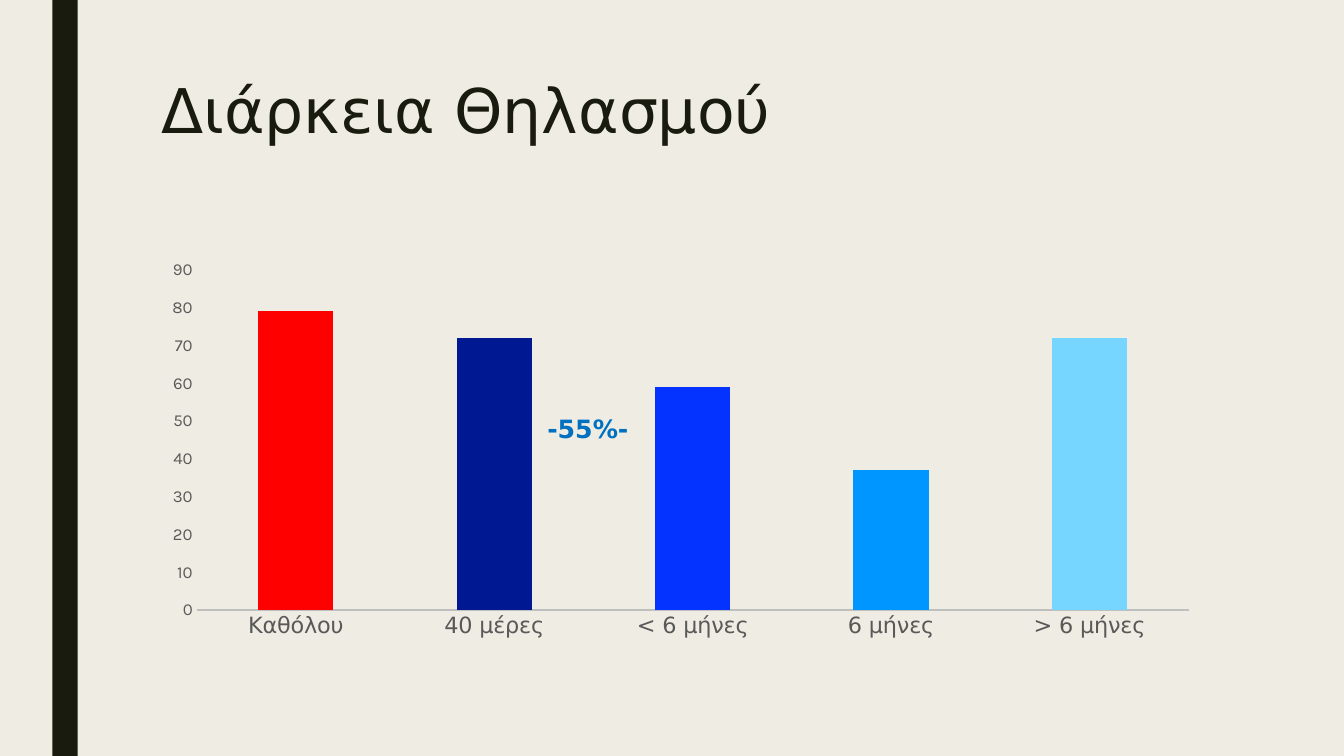
import pptx
import pptx.chart.data
import pptx.dml.color
import pptx.enum.chart
import pptx.enum.shapes
import pptx.enum.text
import pptx.util

Inches = pptx.util.Inches
Pt = pptx.util.Pt


def color(hex_code):
    return pptx.dml.color.RGBColor.from_string(hex_code)


def style_font(font, size, hex_code, name, bold=False):
    font.size = Pt(size)
    font.name = name
    font.bold = bold
    font.color.rgb = color(hex_code)


def write(frame, text, size=18, hex_code="191B0E", name="DejaVu Sans", bold=False,
          spacing=None):
    frame.word_wrap = True
    frame.vertical_anchor = pptx.enum.text.MSO_ANCHOR.TOP
    paragraph = frame.paragraphs[0]
    paragraph.alignment = pptx.enum.text.PP_ALIGN.LEFT
    paragraph.line_spacing = spacing
    run = paragraph.add_run()
    run.text = text
    style_font(run.font, size, hex_code, name, bold)


class SlideBuilder:
    background = "EFEDE3"
    dark = "191B0E"
    label_gray = "595959"
    axis_gray = "BFBFBF"

    def __init__(self, presentation):
        self.slide = presentation.slides.add_slide(presentation.slide_layouts[5])
        fill = self.slide.background.fill
        fill.solid()
        fill.fore_color.rgb = color(self.background)

    def stripe(self, left, top, width, height):
        stripe = self.slide.shapes.add_shape(
            pptx.enum.shapes.MSO_SHAPE.RECTANGLE,
            Inches(left), Inches(top), Inches(width), Inches(height))
        stripe.shadow.inherit = False
        stripe.fill.solid()
        stripe.fill.fore_color.rgb = color(self.dark)
        stripe.line.fill.background()

    def title(self, text, left, top, width, height):
        heading = self.slide.shapes.title
        heading.left, heading.top = Inches(left), Inches(top)
        heading.width, heading.height = Inches(width), Inches(height)
        write(heading.text_frame, text, size=44, hex_code=self.dark, spacing=0.89)

    def text(self, text, left, top, width, height, **style):
        box = self.slide.shapes.add_textbox(
            Inches(left), Inches(top), Inches(width), Inches(height))
        write(box.text_frame, text, **style)

    def columns(self, bars, left, top, width, height):
        data = pptx.chart.data.CategoryChartData()
        data.categories = [duration for duration, _, _ in bars]
        data.add_series("Series 1", [value for _, value, _ in bars])
        chart = self.slide.shapes.add_chart(
            pptx.enum.chart.XL_CHART_TYPE.COLUMN_CLUSTERED,
            Inches(left), Inches(top), Inches(width), Inches(height), data).chart
        chart.has_legend = False
        chart.has_title = False
        style_font(chart.font, 10, "000000", "Karla")

        plot = chart.plots[0]
        plot.gap_width = 164
        plot.overlap = -22
        plot.vary_by_categories = False
        series = plot.series[0]
        for index, (_, _, hex_code) in enumerate(bars):
            fill = series.points[index].format.fill
            fill.solid()
            fill.fore_color.rgb = color(hex_code)

        durations, values = chart.category_axis, chart.value_axis
        for axis, size, name in ((durations, 16, "DejaVu Sans"), (values, 12, "Karla")):
            axis.has_major_gridlines = False
            axis.major_tick_mark = pptx.enum.chart.XL_TICK_MARK.NONE
            axis.minor_tick_mark = pptx.enum.chart.XL_TICK_MARK.NONE
            style_font(axis.tick_labels.font, size, self.label_gray, name)
        durations.format.line.color.rgb = color(self.axis_gray)
        durations.format.line.width = Pt(1.5)
        values.format.line.fill.background()
        values.minimum_scale = 0
        values.maximum_scale = 90
        values.major_unit = 10


def main():
    presentation = pptx.Presentation()
    presentation.slide_width = Inches(13.33)
    presentation.slide_height = Inches(7.5)

    builder = SlideBuilder(presentation)
    builder.stripe(0.52, 0, 0.25, 7.5)
    builder.title("Διάρκεια Θηλασμού", 1.5, 0.75, 10.5, 1.62)
    builder.columns([
        ("Καθόλου", 79, "FF0000"),
        ("40 μέρες", 72, "011893"),
        ("< 6 μήνες", 59, "0432FF"),
        ("6 μήνες", 37, "0096FF"),
        ("> 6 μήνες", 72, "76D6FF"),
    ], 1.5, 2.5, 10.5, 3.92)
    builder.text("-55%-", 5.33, 4.05, 1.27, 0.4, size=18, hex_code="0070C0", bold=True)

    presentation.save("out.pptx")


if __name__ == "__main__":
    main()
